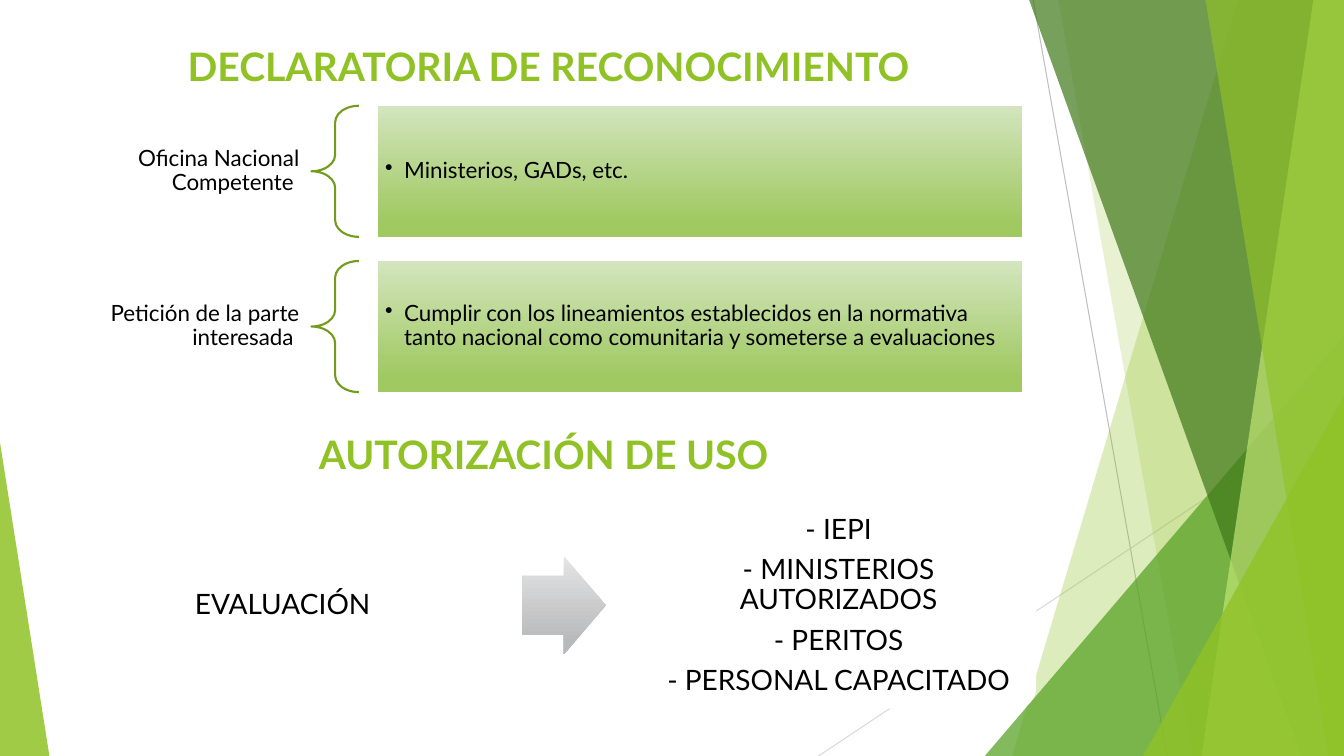
from dataclasses import dataclass

from lxml import etree
from pptx import Presentation
from pptx import util as u
from pptx.dml.color import RGBColor
from pptx.enum import shapes, text
from pptx.oxml.ns import qn

KIND = shapes.MSO_SHAPE
LEFT, MID, RIGHT = text.PP_ALIGN.LEFT, text.PP_ALIGN.CENTER, text.PP_ALIGN.RIGHT


@dataclass(frozen=True)
class Theme:
    font: str = "Lato"
    ink: str = "000000"
    paper: str = "FFFFFF"
    lime: str = "90C226"
    pale: str = "C0E474"
    green: str = "54A021"
    dark: str = "3F7819"
    brace: str = "739B1E"
    bar: tuple = ("D3E5BE", "A0C962")
    arrow: tuple = ("E4E4E5", "B8B9BA")
    rays: tuple = ("BFBFBF", "D9D9D9")
    head: int = 28
    body: int = 16
    card: int = 20
    hair: float = 0.75
    rule: float = 1.5


class Deck:
    cols, rows = 40, 30

    def __init__(self, theme):
        self.theme = theme
        self.show = Presentation()
        self.show.slide_width = u.Emu(12192000)
        self.show.slide_height = u.Inches(7.5)
        self.slide = self.show.slides.add_slide(self.show.slide_layouts[6])
        self.items = self.slide.shapes

    def x(self, col):
        return round(self.show.slide_width * col / self.cols)

    def y(self, row):
        return round(self.show.slide_height * row / self.rows)

    def area(self, box):
        left, top, wide, high = box
        return self.x(left), self.y(top), self.x(wide), self.y(high)

    def paint(self, item, color, alpha=100):
        item.shadow.inherit = False
        item.line.fill.background()
        item.fill.solid()
        item.fill.fore_color.rgb = RGBColor.from_string(color)
        if alpha < 100:
            tone = item._element.spPr.find(qn("a:solidFill"))[0]
            etree.SubElement(tone, qn("a:alpha"), val=str(alpha * 1000))

    def blend(self, item, pair):
        item.shadow.inherit = False
        item.line.fill.background()
        item.fill.gradient()
        item.fill.gradient_angle = 270
        for stop, color, spot in zip(item.fill.gradient_stops, pair, (0, 0.88)):
            stop.color.rgb = RGBColor.from_string(color)
            stop.position = spot

    def ray(self, start, end, color):
        line = self.items.add_connector(
            shapes.MSO_CONNECTOR.STRAIGHT,
            self.x(start[0]), self.y(start[1]), self.x(end[0]), self.y(end[1]))
        line.line.color.rgb = RGBColor.from_string(color)
        line.line.width = u.Pt(self.theme.hair)
        etree.SubElement(line._element.spPr, qn("a:effectLst"))

    def panel(self, top, foot, color, alpha):
        pen = self.items.build_freeform(self.x(top), 0)
        ends = ((self.cols, 0), (self.cols, self.rows), (foot, self.rows))
        pen.add_line_segments([(self.x(c), self.y(r)) for c, r in ends])
        self.paint(pen.convert_to_shape(), color, alpha)

    def wedge(self, left, top, wide, tip, color, alpha):
        item = self.shape(KIND.ISOSCELES_TRIANGLE, (left, top, wide, self.rows - top), [tip])
        self.paint(item, color, alpha)

    def shape(self, kind, box, tweaks=()):
        item = self.items.add_shape(kind, *self.area(box))
        for spot, value in enumerate(tweaks):
            item.adjustments[spot] = value
        return item

    def brace(self, box):
        item = self.shape(KIND.LEFT_BRACE, box, [0.35, 0.5])
        item.shadow.inherit = False
        item.fill.background()
        item.line.color.rgb = RGBColor.from_string(self.theme.brace)
        item.line.width = u.Pt(self.theme.rule)

    def arrow(self, box):
        self.blend(self.shape(KIND.RIGHT_ARROW, box, [0.6, 0.5]), self.theme.arrow)

    def label(self, box, words):
        item = self.items.add_textbox(*self.area(box))
        self.letter(item, [words], self.theme.body, RIGHT, (0.36, 0.16), 0.35)

    def title(self, box, words):
        item = self.items.add_textbox(*self.area(box))
        self.letter(item, [words], self.theme.head, MID, (0.3, 0.2))
        item.text_frame.vertical_anchor = text.MSO_ANCHOR.TOP
        font = item.text_frame.paragraphs[0].font
        font.bold = True
        font.color.rgb = RGBColor.from_string(self.theme.lime)

    def bar(self, box, words):
        item = self.shape(KIND.RECTANGLE, box)
        self.blend(item, self.theme.bar)
        self.letter(item, [words], self.theme.body, LEFT, (0.21, 0.28), 0.15, True)

    def card(self, box, lines):
        item = self.shape(KIND.ROUNDED_RECTANGLE, box, [0.1])
        self.paint(item, self.theme.paper)
        self.letter(item, lines, self.theme.card, MID, (0.42, 0.56), 0.35)

    def letter(self, item, lines, size, align, inset, gap=0, dot=False):
        frame = item.text_frame
        frame.word_wrap = True
        frame.vertical_anchor = text.MSO_ANCHOR.MIDDLE
        frame.margin_left = frame.margin_right = self.x(inset[0])
        frame.margin_top = frame.margin_bottom = self.y(inset[1])
        for spot, words in enumerate(lines):
            para = frame.add_paragraph() if spot else frame.paragraphs[0]
            para.text = words
            para.alignment = align
            if gap:
                para.line_spacing = 0.9
                para.space_after = u.Pt(size * gap)
            if dot:
                props = para._p.get_or_add_pPr()
                hang = u.Inches(0.19)
                props.set("marL", str(hang))
                props.set("indent", str(-hang))
                etree.SubElement(props, qn("a:buChar"), char="•")
            para.font.name = self.theme.font
            para.font.size = u.Pt(size)
            para.font.color.rgb = RGBColor.from_string(self.theme.ink)


def main():
    look = Theme()
    deck = Deck(look)

    deck.ray((30.75, 0), (34.74, 30), look.rays[0])
    deck.ray((40, 16.12), (24.36, 30), look.rays[1])
    deck.panel(36.84, 30.12, look.lime, 30)
    deck.panel(31.5, 35.49, look.lime, 20)
    deck.wedge(29.31, 13.32, 10.69, 1, look.green, 72)
    deck.panel(30.63, 38.73, look.dark, 70)
    deck.panel(39.09, 35.76, look.pale, 70)
    deck.panel(35.88, 39.54, look.lime, 65)
    deck.wedge(34.02, 15.72, 5.98, 1, look.lime, 80)
    deck.wedge(0, 17.56, 1.47, 0, look.lime, 85)

    left, wide = 2.22, 28.2
    deck.title((left, 1.48, wide, 2.64), "DECLARATORIA DE RECONOCIMIENTO")
    steps = (
        ("Oficina Nacional Competente ", "Ministerios, GADs, etc."),
        ("Petición de la parte interesada ",
         "Cumplir con los lineamientos establecidos en la normativa "
         "tanto nacional como comunitaria y someterse a evaluaciones"),
    )
    high, pitch = 5.2, 6.16
    for spot, (name, note) in enumerate(steps):
        top = 4.2 + spot * pitch
        deck.label((left, top, 7.05, high), name)
        deck.brace((9.27, top, 1.41, high))
        deck.bar((11.25, top, 19.17, high), note)

    deck.title((left, 16.88, wide, 2.6), "AUTORIZACIÓN DE USO ")
    deck.card((2.64, 19.96, 11.76, 8.16), ["EVALUACIÓN "])
    deck.arrow((15.54, 22.08, 2.49, 3.88))
    deck.card((19.08, 19.96, 11.76, 8.16), [
        "- IEPI", "- MINISTERIOS AUTORIZADOS", "- PERITOS", "- PERSONAL CAPACITADO"])

    deck.show.save("out.pptx")


if __name__ == "__main__":
    main()
